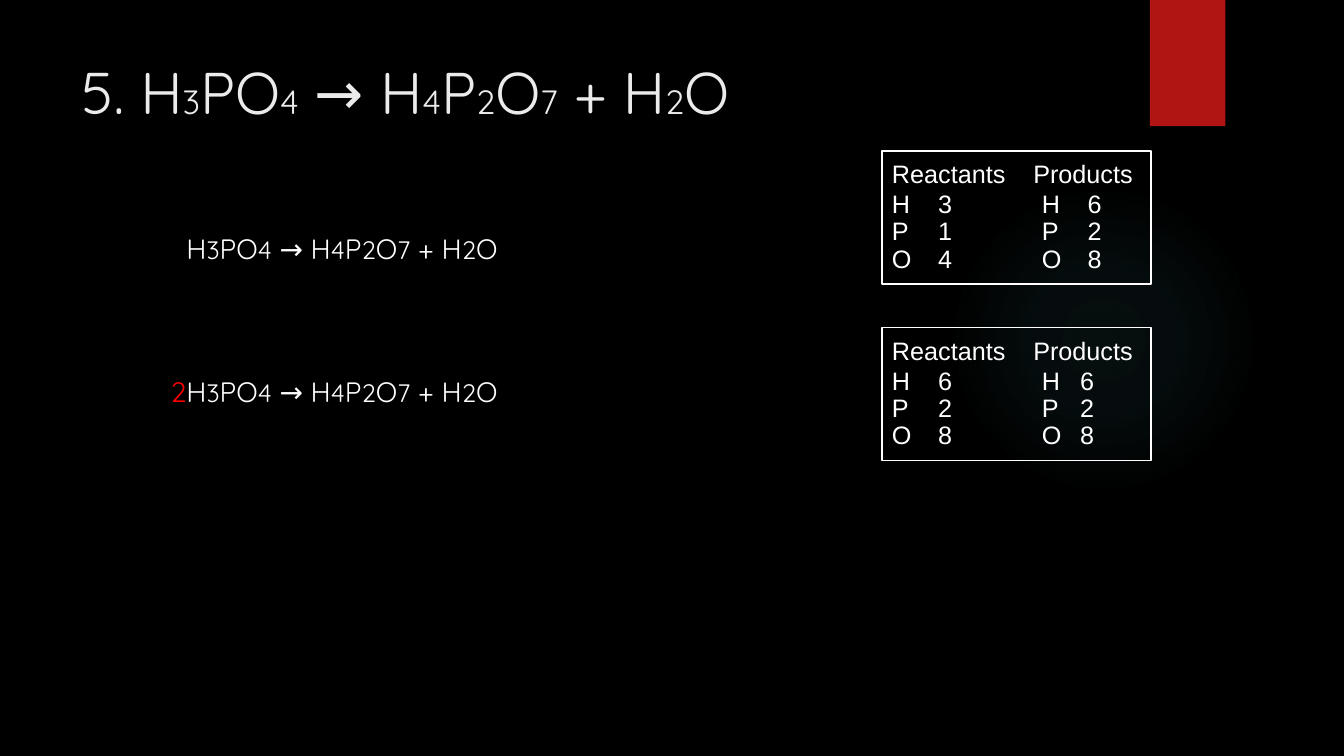
from dataclasses import dataclass

from lxml import etree
from pptx import Presentation
from pptx.dml.color import RGBColor
from pptx.enum.shapes import MSO_SHAPE
from pptx.enum.text import MSO_ANCHOR, PP_ALIGN
from pptx.oxml.ns import qn
from pptx.util import Cm, Pt

RECT, OVAL = MSO_SHAPE.RECTANGLE, MSO_SHAPE.OVAL
TOP, LEFT, RIGHT = MSO_ANCHOR.TOP, PP_ALIGN.LEFT, PP_ALIGN.RIGHT


@dataclass(frozen=True)
class Theme:
    back: str = "000000"
    accent: str = "B01513"
    glow: str = "50B9C1"
    title: str = "EBEBEB"
    text: str = "FFFFFF"
    coefficient: str = "FF0000"
    formula_font: str = "Quicksand"
    count_font: str = "Arial"
    title_sizes: tuple = (42, 24)      # symbols, subscripts
    equation_sizes: tuple = (20, 18)
    count_size: int = 18
    count_pitch: float = 19.6


THEME = Theme()
EQUATION = "H_3PO_4 → H_4P_2O_7 + H_2O"


def add_run(p, text, font, size, color):
    r = p.add_run()
    r.text = text
    for name, value in {"name": font, "size": Pt(size)}.items():
        setattr(r.font, name, value)
    r.font.color.rgb = RGBColor.from_string(color)


def add_formula(p, formula, sizes, color):
    """Write a formula in which "_" marks the next digit as a subscript."""
    first, *rest = formula.split("_")
    add_run(p, first, THEME.formula_font, sizes[0], color)
    for part in rest:
        add_run(p, part[0], THEME.formula_font, sizes[1], color)
        if part[1:]:
            add_run(p, part[1:], THEME.formula_font, sizes[0], color)


def add_shape(s, kind, box):
    sp = s.shapes.add_shape(kind, *(Cm(v) for v in box))
    sp.shadow.inherit = False
    sp.line.fill.background()
    return sp


def add_text_box(s, box):
    tf = s.shapes.add_textbox(*(Cm(v) for v in box)).text_frame
    tf.word_wrap = True
    tf.vertical_anchor = TOP
    return tf.paragraphs[0]


def add_glow(s, box):
    sp = add_shape(s, OVAL, box)
    sp.fill.background()
    grad = etree.Element(qn("a:gradFill"))
    stops = etree.SubElement(grad, qn("a:gsLst"))
    for pos, alpha in ((0, 7), (36, 6), (69, 0)):
        stop = etree.SubElement(stops, qn("a:gs"), pos=str(pos * 1000))
        color = etree.SubElement(stop, qn("a:srgbClr"), val=THEME.glow)
        etree.SubElement(color, qn("a:alpha"), val=str(alpha * 1000))
    shade = etree.SubElement(grad, qn("a:path"), path="circle")
    etree.SubElement(shade, qn("a:fillToRect"),
                     {side: "50000" for side in "ltrb"})
    no_fill = sp.element.spPr.find(qn("a:noFill"))
    no_fill.getparent().replace(no_fill, grad)


def add_ribbon(s, box):
    sp = add_shape(s, RECT, box)
    sp.fill.solid()
    sp.fill.fore_color.rgb = RGBColor.from_string(THEME.accent)


def add_title(s, box, formula):
    add_formula(add_text_box(s, box), formula, THEME.title_sizes, THEME.title)


def add_equation(s, box, coefficient):
    p = add_text_box(s, box)
    p.alignment = RIGHT
    if coefficient:
        add_run(p, coefficient, THEME.formula_font, THEME.equation_sizes[0],
                THEME.coefficient)
    add_formula(p, EQUATION, THEME.equation_sizes, THEME.text)


def set_tabs(p, stops):
    tabs = etree.SubElement(p._p.get_or_add_pPr(), qn("a:tabLst"))
    for stop in stops:
        etree.SubElement(tabs, qn("a:tab"), pos=str(Cm(stop)), algn="l")


def add_atom_count(s, box, counts, last_stop):
    sp = add_shape(s, RECT, box)
    sp.fill.background()
    sp.line.color.rgb = RGBColor.from_string(THEME.text)
    sp.line.width = Pt(1)
    tf = sp.text_frame
    for name, value in {"word_wrap": True, "vertical_anchor": TOP,
                        "margin_top": Cm(0.18)}.items():
        setattr(tf, name, value)

    # Heading, then one row per element
    rows = [("Reactants", "Products")]
    rows += [(atom, before, atom, after) for atom, before, after in counts]
    for i, row in enumerate(rows):
        p = tf.add_paragraph() if i else tf.paragraphs[0]
        p.alignment = LEFT
        if i:
            p.line_spacing = Pt(THEME.count_pitch)
        else:
            p.space_after = Pt(1.8)
        set_tabs(p, (1.16, 3.78, last_stop) if i else (3.56,))
        add_run(p, "\t".join(row), THEME.count_font, THEME.count_size,
                THEME.text)


def build_slide(prs):
    s = prs.slides.add_slide(prs.slide_layouts[6])
    s.background.fill.solid()
    s.background.fill.fore_color.rgb = RGBColor.from_string(THEME.back)

    # Backdrop
    add_glow(s, (23.9, 4.65, 7.82, 7.82))
    add_ribbon(s, (28.98, 0, 1.9, 3.18))

    # Title
    add_title(s, (1.8, 1.27, 26.14, 3.88), f"5. {EQUATION}")

    # Balancing steps: equation on the left, atom count on the right
    steps = (
        ("", (("H", "3", "6"), ("P", "1", "2"), ("O", "4", "8")), 4.93),
        ("2", (("H", "6", "6"), ("P", "2", "2"), ("O", "8", "8")), 4.74),
    )
    for i, (coefficient, counts, last_stop) in enumerate(steps):
        add_equation(s, (3.07, 5.72 + i * 3.6, 9.72, 1.2), coefficient)
        add_atom_count(s, (22.23, 3.81 + i * 4.45, 6.78, 3.35),
                       counts, last_stop)


def main():
    prs = Presentation()
    prs.slide_width, prs.slide_height = Cm(33.87), Cm(19.05)
    build_slide(prs)
    prs.save("out.pptx")


if __name__ == "__main__":
    main()
